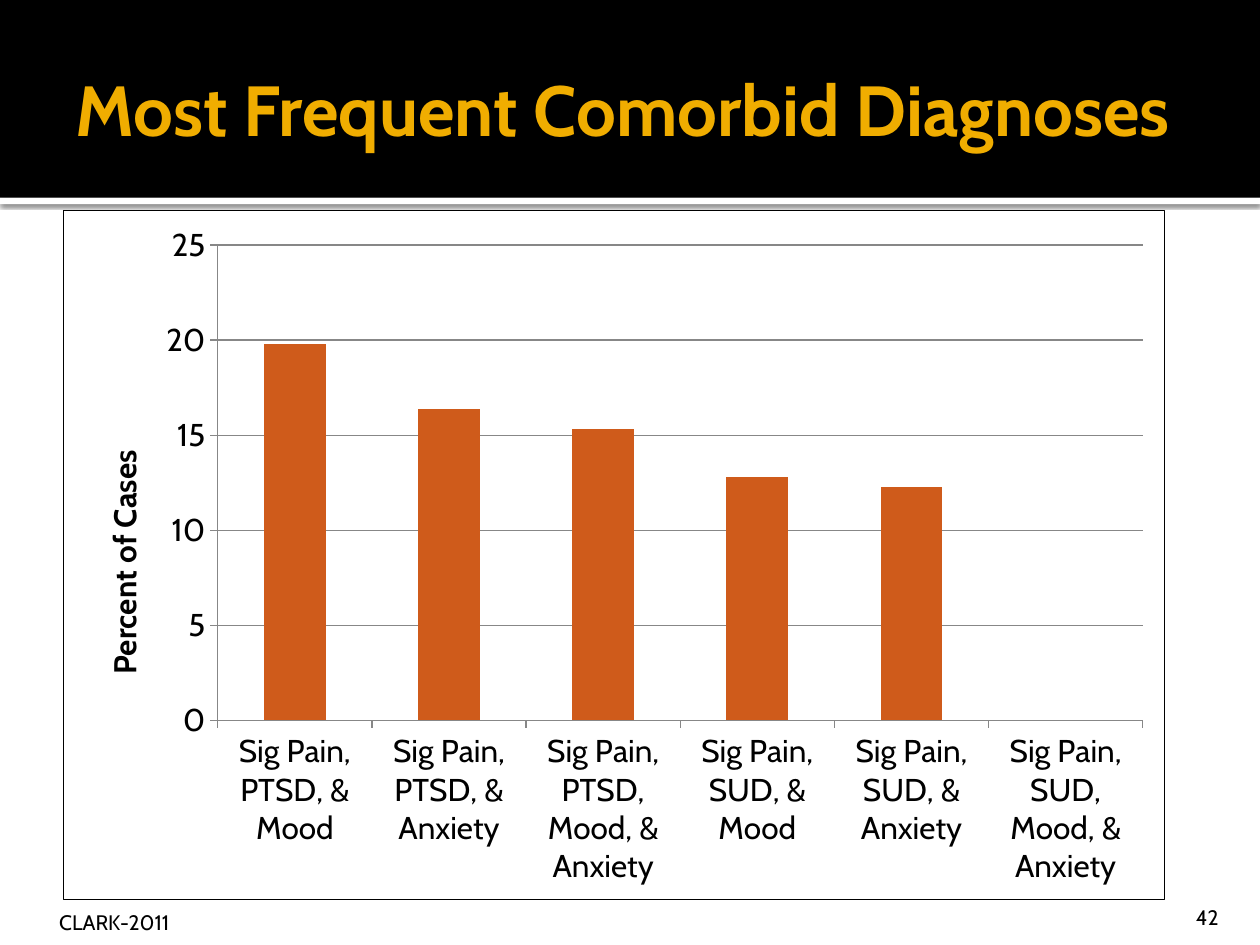
from dataclasses import dataclass

from lxml.etree import SubElement
from pptx import Presentation
from pptx.chart.data import CategoryChartData
from pptx.dml.color import RGBColor
from pptx.enum.chart import XL_CHART_TYPE as Chart, XL_TICK_MARK as Tick
from pptx.enum.shapes import MSO_SHAPE as Shape
from pptx.enum.text import MSO_ANCHOR as Anchor, PP_ALIGN as Align
from pptx.oxml import parse_xml
from pptx.oxml.ns import nsdecls, qn
from pptx.util import Pt

FONT = "Cabin"
BLACK, WHITE, GOLD, ORANGE, GRAY = "000000", "FFFFFF", "F0AD00", "CF5B1B", "878787"


@dataclass
class Box:
    left: float
    top: float
    width: float
    height: float

    def lengths(self) -> list:
        return [Pt(v) for v in (self.left, self.top, self.width, self.height)]


@dataclass
class Label:
    text: str
    box: Box
    size: float
    margins: tuple
    color: str = BLACK
    bold: bool = False
    align: Align = Align.LEFT
    anchor: Anchor = Anchor.BOTTOM


LABELS = [
    Label("Most Frequent Comorbid Diagnoses", Box(36, 12.24, 648, 98.64), 40.5,
          (7.2, 3.6, 3.6, 3.6), GOLD, True, anchor=Anchor.MIDDLE),
    Label("CLARK-2011", Box(30.24, 504, 611.28, 30.24), 12, (3.6, 3.6, 3.6, 0)),
    Label("42", Box(645.84, 509.76, 57.6, 21.6), 12, (7.2, 3.6, 7.2, 0),
          align=Align.RIGHT),
]

CASES = {
    "Sig Pain, PTSD, & Mood": 19.8,
    "Sig Pain, PTSD, & Anxiety": 16.4,
    "Sig Pain, PTSD, Mood, & Anxiety": 15.3,
    "Sig Pain, SUD, & Mood": 12.8,
    "Sig Pain, SUD, & Anxiety": 12.3,
    "Sig Pain, SUD, Mood, & Anxiety": None,
}


def rgb(color: str) -> RGBColor:
    return RGBColor.from_string(color)


def set_font(font, size: float, color: str = BLACK, bold: bool = False) -> None:
    font.name, font.size, font.bold = FONT, Pt(size), bold
    font.color.rgb = rgb(color)


def add_band(s, box: Box, color: str):
    sp = s.shapes.add_shape(Shape.RECTANGLE, *box.lengths())
    sp.shadow.inherit = False
    sp.fill.solid()
    sp.fill.fore_color.rgb = rgb(color)
    sp.line.fill.background()
    return sp


def add_shadow(sp) -> None:
    effects = sp.element.spPr.find(qn("a:effectLst"))
    effects.append(parse_xml(
        f'<a:outerShdw {nsdecls("a")} blurRad="{Pt(2.5)}" dist="{Pt(0.8)}" '
        f'dir="5400000" algn="tl" rotWithShape="0"><a:srgbClr val="{BLACK}">'
        '<a:alpha val="60000"/></a:srgbClr></a:outerShdw>'))


def add_label(s, label: Label) -> None:
    tf = s.shapes.add_textbox(*label.box.lengths()).text_frame
    tf.word_wrap = True
    tf.vertical_anchor = label.anchor
    tf.margin_left, tf.margin_top, tf.margin_right, tf.margin_bottom = map(Pt, label.margins)
    p = tf.paragraphs[0]
    p.text, p.alignment = label.text, label.align
    set_font(p.font, label.size, label.color, label.bold)


def set_layout(element, index: int, **values) -> None:
    for old in element.findall(qn("c:layout")):
        element.remove(old)
    layout = parse_xml(f'<c:layout {nsdecls("c")}><c:manualLayout/></c:layout>')
    for tag, value in values.items():
        SubElement(layout[0], qn(f"c:{tag}")).set("val", str(value))
    element.insert(index, layout)


def add_border(chart, color: str, width: float) -> None:
    chart.element.find(qn("c:chart")).addnext(parse_xml(
        f'<c:spPr {nsdecls("c", "a")}><a:noFill/><a:ln w="{Pt(width)}"><a:solidFill>'
        f'<a:srgbClr val="{color}"/></a:solidFill></a:ln></c:spPr>'))


def add_case_chart(s, box: Box) -> None:
    data = CategoryChartData()
    data.categories = list(CASES)
    data.add_series("Series 1", list(CASES.values()))
    chart = s.shapes.add_chart(Chart.COLUMN_CLUSTERED, *box.lengths(), data).chart
    chart.has_title = chart.has_legend = False
    set_font(chart.font, 18)
    add_border(chart, BLACK, 0.75)

    plot = chart.plots[0]
    plot.gap_width, plot.vary_by_categories = 150, False
    fill = plot.series[0].format.fill
    fill.solid()
    fill.fore_color.rgb = rgb(ORANGE)

    value_axis = chart.value_axis
    for axis in (chart.category_axis, value_axis):
        axis.major_tick_mark, axis.minor_tick_mark = Tick.OUTSIDE, Tick.NONE
        axis.format.line.color.rgb = rgb(GRAY)
        axis.format.line.width = Pt(0.75)
    value_axis.minimum_scale, value_axis.maximum_scale, value_axis.major_unit = 0, 25, 5
    value_axis.has_major_gridlines = True
    value_axis.major_gridlines.format.line.color.rgb = rgb(GRAY)

    title = value_axis.axis_title
    p = title.text_frame.paragraphs[0]
    p.text = "Percent of Cases"
    set_font(p.font, 18, bold=True)
    body = next(title.element.iter(qn("a:bodyPr")))
    body.set("rot", "-5400000")
    body.set("vert", "horz")
    set_layout(title.element, 1, xMode="edge", yMode="edge", x=0.03, y=0.34)
    set_layout(chart.element.find(qn("c:chart")).find(qn("c:plotArea")), 0,
               layoutTarget="inner", xMode="edge", yMode="edge",
               x=0.14, y=0.05, w=0.84, h=0.69)


def main() -> None:
    prs = Presentation()
    prs.slide_width, prs.slide_height = Pt(720), Pt(540)
    s = prs.slides.add_slide(prs.slide_layouts[6])
    add_shadow(add_band(s, Box(0, 113.04, 720, 3.6), WHITE))
    add_band(s, Box(0, 0, 720, 113.04), BLACK)
    for label in LABELS:
        add_label(s, label)
    add_case_chart(s, Box(36, 120, 630, 394.56))
    prs.save("out.pptx")


if __name__ == "__main__":
    main()
